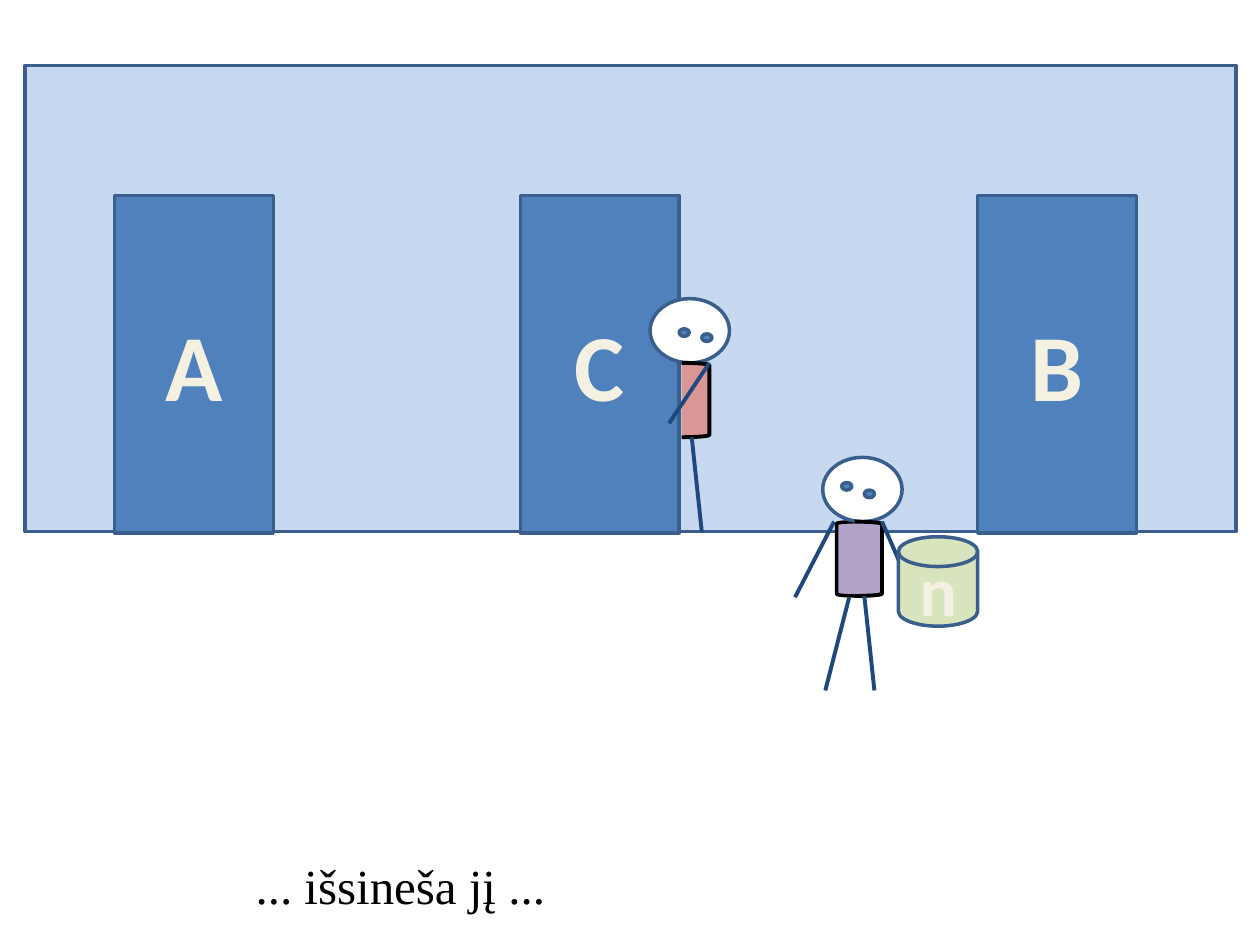
from pptx import Presentation
from pptx.dml.color import RGBColor
from pptx.enum.shapes import MSO_CONNECTOR as LINE, MSO_SHAPE as SHAPE
from pptx.enum.text import MSO_ANCHOR as ANCHOR, PP_ALIGN as ALIGN
from pptx.oxml.ns import qn
from pptx.util import Inches, Pt
from lxml.etree import SubElement

COLORS = {
    "wall": "C6D9F1", "door": "4F81BD", "outline": "3A5F8C", "letter": "F4F1E3",
    "head": "FFFFFF", "black": "000000", "limb": "1F497D",
    "watcher": "D99694", "carrier": "B3A2C7", "bin": "D7E4BD",
}
COLUMNS, ROWS = 100, 75
HEAD, EYE, TORSO = (6.3, 5.1), (0.8, 0.6), (2.2, 5.9)
FRONT_LEG = ((3.3, 11), (4.1, 18.5))


def color(name):
    return RGBColor.from_string(COLORS[name])


class Scene:
    def __init__(self, deck):
        self.page = deck.slides.add_slide(deck.slide_layouts[6])
        self.column = deck.slide_width / COLUMNS
        self.row = deck.slide_height / ROWS

    def grid(self, column, row):
        return round(column * self.column), round(row * self.row)

    def shape(self, kind, place, size, fill, outline="outline", width=2, parent=None):
        shapes = (parent or self.page).shapes
        box = shapes.add_shape(kind, *self.grid(*place), *self.grid(*size))
        box.shadow.inherit = False
        box.fill.solid()
        box.fill.fore_color.rgb = color(fill)
        box.line.color.rgb = color(outline)
        box.line.width = Pt(width)
        return box

    def label(self, box, text, size):
        box.text_frame.vertical_anchor = ANCHOR.MIDDLE
        para = box.text_frame.paragraphs[0]
        para.text = text
        para.alignment = ALIGN.CENTER
        self.font(para, "Calibri", size, "letter", True)

    def font(self, para, name, size, fill, bold=False):
        para.font.name = name
        para.font.size = Pt(size)
        para.font.bold = bold
        para.font.color.rgb = color(fill)

    def limb(self, start, end, parent):
        line = parent.shapes.add_connector(
            LINE.STRAIGHT, *self.grid(*start), *self.grid(*end))
        line.line.color.rgb = color("limb")
        line.line.width = Pt(2.25)
        SubElement(line._element.spPr, qn("a:effectLst"))

    def person(self, place, fill, eyes, limbs, parent):
        def offset(point):
            return place[0] + point[0], place[1] + point[1]

        self.shape(SHAPE.OVAL, place, HEAD, "head", parent=parent)
        for eye in eyes:
            self.shape(SHAPE.OVAL, offset(eye), EYE, "door", parent=parent)
        self.shape(SHAPE.RIGHT_BRACKET, offset((2.5, 5.1)), TORSO, fill,
                   "black", 2.25, parent)
        for start, end in limbs:
            self.limb(offset(start), offset(end), parent)

    def caption(self, text, place, size):
        box = self.page.shapes.add_textbox(*self.grid(*place), *self.grid(*size))
        box.text_frame.word_wrap = True
        para = box.text_frame.paragraphs[0]
        para.text = text
        self.font(para, "Times New Roman", 28, "black")


def main():
    deck = Presentation()
    deck.slide_width, deck.slide_height = Inches(10), Inches(7.5)
    scene = Scene(deck)

    scene.shape(SHAPE.RECTANGLE, (2, 5.2), (96.1, 37), "wall")
    for letter, column in (("A", 9.1), ("B", 77.6), ("C", 41.3)):
        door = scene.shape(SHAPE.RECTANGLE, (column, 15.5), (12.6, 26.8), "door")
        scene.label(door, letter, 54)

    scene.person((51.6, 23.7), "watcher", ((2.3, 2.4), (4.1, 2.8)),
                 (FRONT_LEG, ((4.7, 5.1), (1.5, 9.9))), scene.page)

    carrier = scene.page.shapes.add_group_shape()
    scene.shape(SHAPE.LEFT_BRACKET, (66.4, 41.4), (1.8, 5.9), "carrier",
                "black", parent=carrier)
    scene.person((65.3, 36.3), "carrier", ((1.5, 2), (3.3, 2.6)),
                 (FRONT_LEG, ((4.7, 5.1), (7.3, 11.1)),
                  ((2.1, 11.1), (0.2, 18.5)), ((0.9, 5.1), (-2.2, 11.1))), carrier)

    money_bin = scene.shape(SHAPE.FLOWCHART_MAGNETIC_DISK, (71.3, 42.6), (6.3, 7.1), "bin")
    scene.label(money_bin, "n", 40)
    scene.caption("... išsineša jį ...", (19.3, 67.4), (77.9, 5.7))

    deck.save("out.pptx")


if __name__ == "__main__":
    main()
